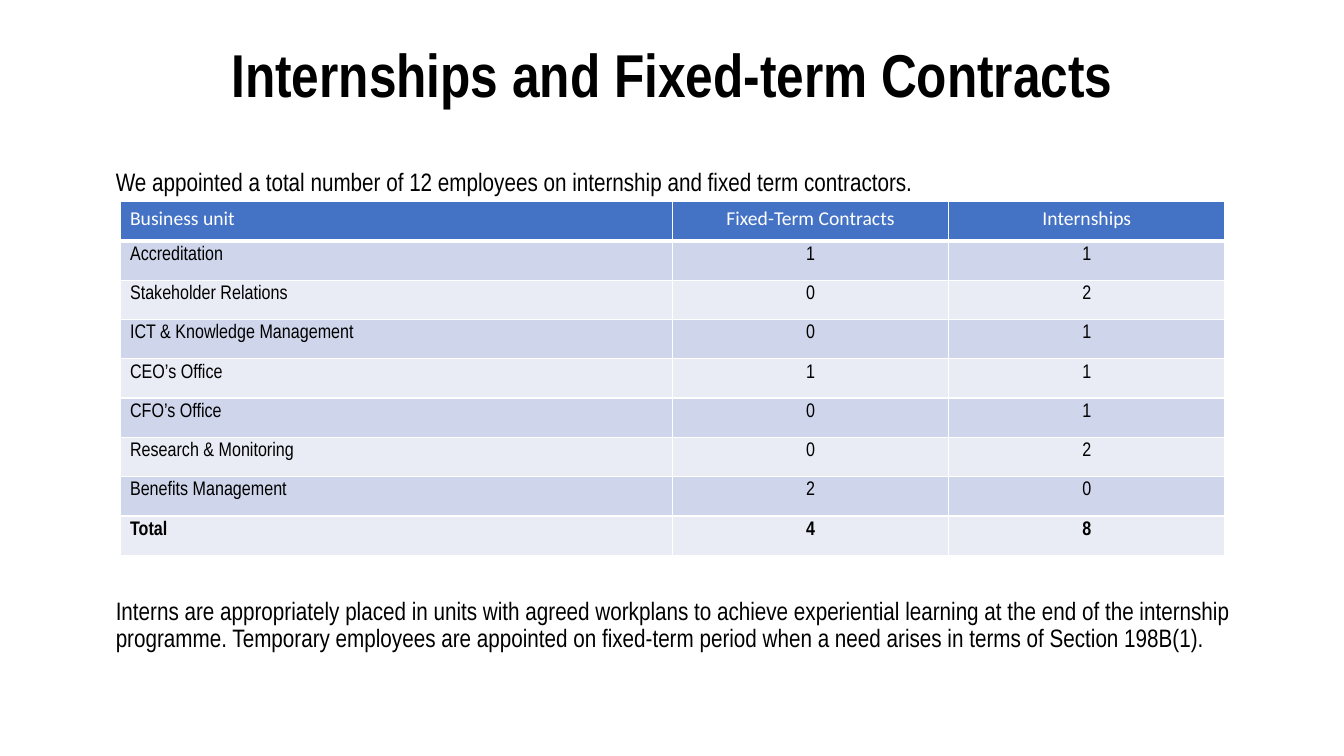
from lxml import etree
from pptx import Presentation, util as u
from pptx.dml import color
from pptx.enum import text
from pptx.oxml import ns

ALIGN = text.PP_ALIGN


def rgb(value):
    return color.RGBColor.from_string(value)


class Deck:
    FONT, HEAD_FONT = "Arial Narrow", "Calibri"
    INK, WHITE, HEADER = "000000", "FFFFFF", "4472C4"
    BANDS = ("CFD5EA", "E9EBF5")

    def __init__(self, prs):
        self.s = prs.slides.add_slide(prs.slide_layouts[6])

    def run(self, p, words, size, font=FONT, ink=INK, bold=False):
        r = p.add_run()
        r.text = words
        r.font.size, r.font.name, r.font.bold = u.Pt(size), font, bold
        r.font.color.rgb = rgb(ink)

    def textbox(self, box, words, size, align=ALIGN.LEFT, bold=False,
                anchor=text.MSO_ANCHOR.TOP):
        tf = self.s.shapes.add_textbox(*map(u.Inches, box)).text_frame
        tf.word_wrap = True
        tf.vertical_anchor = anchor
        p = tf.paragraphs[0]
        p.alignment, p.line_spacing = align, 0.9
        self.run(p, words, size, bold=bold)

    def border(self, cell, side, width):
        ln = etree.SubElement(cell._tc.get_or_add_tcPr(), ns.qn(f"a:{side}"),
                              w=str(u.Pt(width)))
        fill = etree.SubElement(ln, ns.qn("a:solidFill"))
        etree.SubElement(fill, ns.qn("a:srgbClr"), val=self.WHITE)

    def cell(self, cell, words, row, col, last):
        head = row == 0
        # Borders precede the fill in the cell properties
        for side in ("lnL", "lnR", "lnT", "lnB"):
            thick = (head and side == "lnB") or (row == 1 and side == "lnT")
            self.border(cell, side, 3 if thick else 1)
        cell.fill.solid()
        cell.fill.fore_color.rgb = rgb(
            self.HEADER if head else self.BANDS[(row - 1) % 2])
        p = cell.text_frame.paragraphs[0]
        p.alignment = ALIGN.CENTER if col else ALIGN.JUSTIFY
        self.run(p, words, 14, self.HEAD_FONT if head else self.FONT,
                 self.WHITE if head else self.INK, last)

    def table(self, left, top, widths, row_height, rows):
        box = (left, top, sum(widths), row_height * len(rows))
        table = self.s.shapes.add_table(
            len(rows), len(widths), *map(u.Inches, box)).table
        for column, width in zip(table.columns, widths):
            column.width = u.Inches(width)
        for i, values in enumerate(rows):
            for j, value in enumerate(values):
                self.cell(table.cell(i, j), str(value), i, j,
                          i == len(rows) - 1)


def main():
    prs = Presentation()
    prs.slide_width, prs.slide_height = u.Inches(13.33), u.Inches(7.5)
    deck = Deck(prs)

    # Title
    deck.textbox((0.92, 0.4, 11.5, 0.75),
                 "Internships and Fixed-term Contracts", 43.2,
                 ALIGN.CENTER, True, text.MSO_ANCHOR.MIDDLE)

    # Introduction
    deck.textbox((1.05, 1.63, 11.5, 0.37),
                 "We appointed a total number of 12 employees on internship "
                 "and fixed term contractors.", 18)

    # Appointments per business unit
    units = [
        ("Accreditation", 1, 1),
        ("Stakeholder Relations", 0, 2),
        ("ICT & Knowledge Management", 0, 1),
        ("CEO’s Office", 1, 1),
        ("CFO’s Office", 0, 1),
        ("Research & Monitoring", 0, 2),
        ("Benefits Management", 2, 0),
    ]
    total = ("Total", sum(n[1] for n in units), sum(n[2] for n in units))
    header = ("Business unit", "Fixed-Term Contracts", "Internships")
    deck.table(1.19, 2, (5.48, 2.74, 2.74), 0.39, [header, *units, total])

    # Closing remark
    deck.textbox((1.05, 5.89, 11.5, 0.65),
                 "Interns are appropriately placed in units with agreed "
                 "workplans to achieve experiential learning at the end of "
                 "the internship programme. Temporary employees are appointed "
                 "on fixed-term period when a need arises in terms of "
                 "Section 198B(1).", 18)

    prs.save("out.pptx")


if __name__ == "__main__":
    main()
